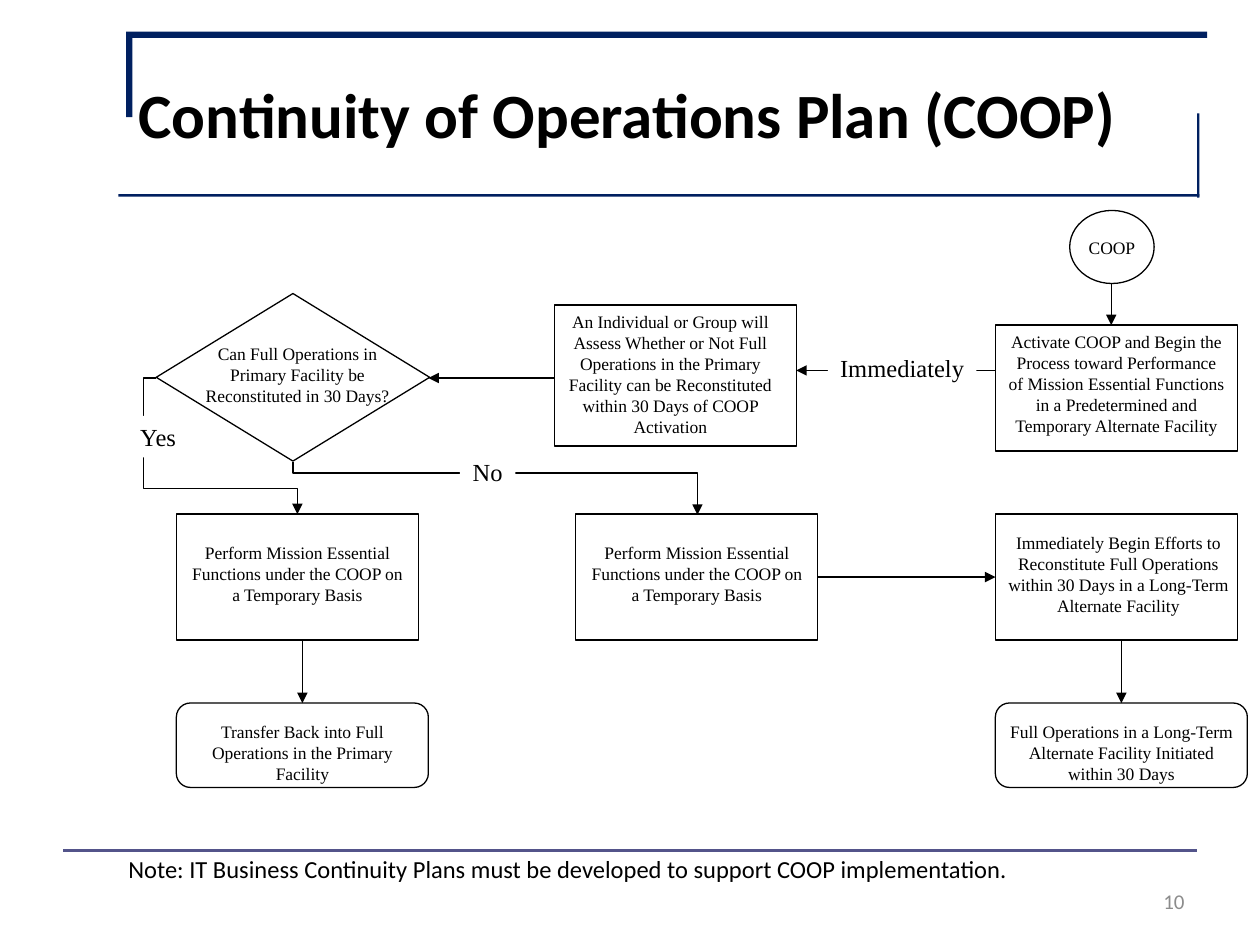
from pptx import Presentation
from pptx.dml.color import RGBColor
from pptx.enum.shapes import MSO_CONNECTOR as Link, MSO_SHAPE as Kind
from pptx.enum.text import MSO_ANCHOR as Anchor, PP_ALIGN as Align
from pptx.oxml.ns import qn
from pptx.util import Inches, Pt
from lxml.etree import SubElement

NAVY = RGBColor(0x00, 0x20, 0x60)
RULE = RGBColor(0x53, 0x54, 0x8A)
BLACK = RGBColor(0, 0, 0)
WHITE = RGBColor(255, 255, 255)
GRAY = RGBColor(0x8C, 0x8C, 0x8C)
SERIF, SANS = "Times New Roman", "Calibri"

LEFT, MID, RIGHT = 1.4, 4.57, 7.9
STEP, END = 4.08, 5.58
WIDE, TALL = 1.92, 1
PILL = (2, 0.67)
BASIS = "Perform Mission Essential Functions under the COOP on a Temporary Basis"
NODES = [
    (Kind.FLOWCHART_CONNECTOR, (8.49, 1.67, 0.67, 0.58),
     "COOP", (8.24, 1.83, 1.17, 0.27)),
    (Kind.FLOWCHART_PROCESS, (RIGHT, 2.58, WIDE, TALL),
     "Activate COOP and Begin the Process toward Performance of Mission "
     "Essential Functions in a Predetermined and Temporary Alternate Facility",
     (RIGHT, 2.58, WIDE, 0.93)),
    (Kind.FLOWCHART_PROCESS, (4.4, 2.42, WIDE, 1.12),
     "An Individual or Group will Assess Whether or Not Full Operations in the "
     "Primary Facility can be Reconstituted within 30 Days of COOP Activation",
     (4.32, 2.42, 2, 1.1)),
    (Kind.FLOWCHART_DECISION, (1.24, 2.33, 2.17, 1.33),
     "Can Full Operations in Primary Facility be Reconstituted in 30 Days?",
     (LEFT, 2.67, WIDE, 0.6)),
    (Kind.FLOWCHART_PROCESS, (LEFT, STEP, WIDE, TALL),
     BASIS, (LEFT, STEP + 0.17, WIDE, 0.6)),
    (Kind.FLOWCHART_PROCESS, (MID, STEP, WIDE, TALL),
     BASIS, (MID, STEP + 0.17, WIDE, 0.6)),
    (Kind.FLOWCHART_PROCESS, (RIGHT, STEP, WIDE, TALL),
     "Immediately Begin Efforts to Reconstitute Full Operations within 30 Days "
     "in a Long-Term Alternate Facility", (RIGHT, STEP + 0.09, 1.95, 0.77)),
    (Kind.FLOWCHART_ALTERNATE_PROCESS, (LEFT, END, *PILL),
     "Transfer Back into Full Operations in the Primary Facility",
     (LEFT, END + 0.09, 2, 0.6)),
    (Kind.FLOWCHART_ALTERNATE_PROCESS, (RIGHT, END, *PILL),
     "Full Operations in a Long-Term Alternate Facility Initiated within 30 Days",
     (RIGHT, END + 0.09, 2, 0.6)),
]
ARROWS = [
    (8.82, 2.25, 8.82, 2.58),
    (RIGHT, 2.94, 6.32, 2.94),
    (4.4, 3, 3.4, 3),
    (MID + WIDE, 4.58, RIGHT, 4.58),
    (LEFT + 1, STEP + TALL, LEFT + 1, END),
    (RIGHT + 1, STEP + TALL, RIGHT + 1, END),
]
TAGS = [
    ("Yes", (1, 3.3, 0.51, 0.33)),
    ("Immediately", (6.57, 2.75, 1.18, 0.33)),
    ("No", (3.65, 3.58, 0.44, 0.33)),
]
BARS = [
    (0.94, 1.54, 8.58, 0.02),
    (1, 0.25, 8.58, 0.05),
    (1, 0.26, 0.05, 0.67),
    (9.5, 0.9, 0.02, 0.67),
]


def area(box):
    """Turn a box in inches into lengths."""
    return [Inches(v) for v in box]


def write(item, text, size, face=SERIF, align=Align.CENTER, color=BLACK,
          anchor=Anchor.TOP, wrap=True):
    """Set the text of a shape and its format."""
    frame = item.text_frame
    frame.word_wrap = wrap
    frame.vertical_anchor = anchor
    frame.text = text
    para = frame.paragraphs[0]
    para.alignment = align
    para.font.name, para.font.size = face, Pt(size)
    para.font.color.rgb = color
    return para


def label(slide, box, text, size, **style):
    """Add a text box."""
    write(slide.shapes.add_textbox(*area(box)), text, size, **style)


def block(slide, box, color):
    """Add a plain filled rectangle."""
    item = slide.shapes.add_shape(Kind.RECTANGLE, *area(box))
    item.shadow.inherit = False
    item.fill.solid()
    item.fill.fore_color.rgb = color
    item.line.fill.background()
    return item


def node(slide, kind, box, text, inner):
    """Add an outlined flowchart shape with its text."""
    item = slide.shapes.add_shape(kind, *area(box))
    item.shadow.inherit = False
    item.fill.background()
    item.line.color.rgb = BLACK
    item.line.width = Pt(0.75)
    label(slide, inner, text, 10)


def link(slide, ends, kind=Link.STRAIGHT, color=BLACK, width=0.75, head=True):
    """Add a connector, with an arrowhead if wanted."""
    item = slide.shapes.add_connector(kind, *area(ends))
    item.line.color.rgb = color
    item.line.width = Pt(width)
    if head:
        SubElement(item.line._get_or_add_ln(), qn("a:tailEnd"), type="triangle")
    SubElement(item._element.spPr, qn("a:effectLst"))
    return item


def elbow(slide, ends, preset, bends, turn=0):
    """Add a bent arrow with its bends as shares of its size."""
    props = link(slide, ends, Link.ELBOW)._element.spPr
    props.find(qn("a:xfrm")).set("rot", str(turn * 60000))
    geom = props.find(qn("a:prstGeom"))
    geom.set("prst", preset)
    guides = geom.find(qn("a:avLst"))
    if guides is None:
        guides = SubElement(geom, qn("a:avLst"))
    for num, bend in enumerate(bends, 1):
        SubElement(guides, qn("a:gd"), name=f"adj{num}",
                   fmla=f"val {round(bend * 100000)}")


def header(slide):
    """Draw the frame bars and the title."""
    for bar in BARS:
        block(slide, bar, NAVY)
    title = slide.shapes.title
    title.left, title.top, title.width, title.height = area((1, 0.3, 8.5, 1.2))
    para = write(title, "Continuity of Operations Plan (COOP)", 36, SANS,
                 Align.LEFT, anchor=Anchor.MIDDLE)
    para.font.bold = True


def chart(slide):
    """Draw the flowchart."""
    for spec_row in NODES:
        node(slide, *spec_row)
    for ends in ARROWS:
        link(slide, ends)
    elbow(slide, (1.24, 3, 2.36, STEP), "bentConnector4", (-0.09, 0.81))
    elbow(slide, (4.14, 2.27, 3.72, 5.48), "bentConnector3", (0.21,), 270)
    for text, box in TAGS:
        write(block(slide, box, WHITE), text, 14, wrap=False)


def footer(slide):
    """Draw the rule, the note and the page number."""
    link(slide, (0.5, 6.75, 9.5, 6.75), color=RULE, width=1.5, head=False)
    label(slide, (0.92, 6.73, 8.58, 0.34),
          "Note: IT Business Continuity Plans must be developed to support "
          "COOP implementation.", 14, face=SANS, align=Align.LEFT)
    label(slide, (7.17, 6.95, 2.33, 0.4), "10", 12, face=SANS,
          align=Align.RIGHT, color=GRAY, anchor=Anchor.MIDDLE)


def main():
    """Build and save the slide."""
    deck = Presentation()
    deck.slide_width, deck.slide_height = Inches(10), Inches(7.5)
    slide = deck.slides.add_slide(deck.slide_layouts[5])
    header(slide)
    chart(slide)
    footer(slide)
    deck.save("out.pptx")


if __name__ == "__main__":
    main()
